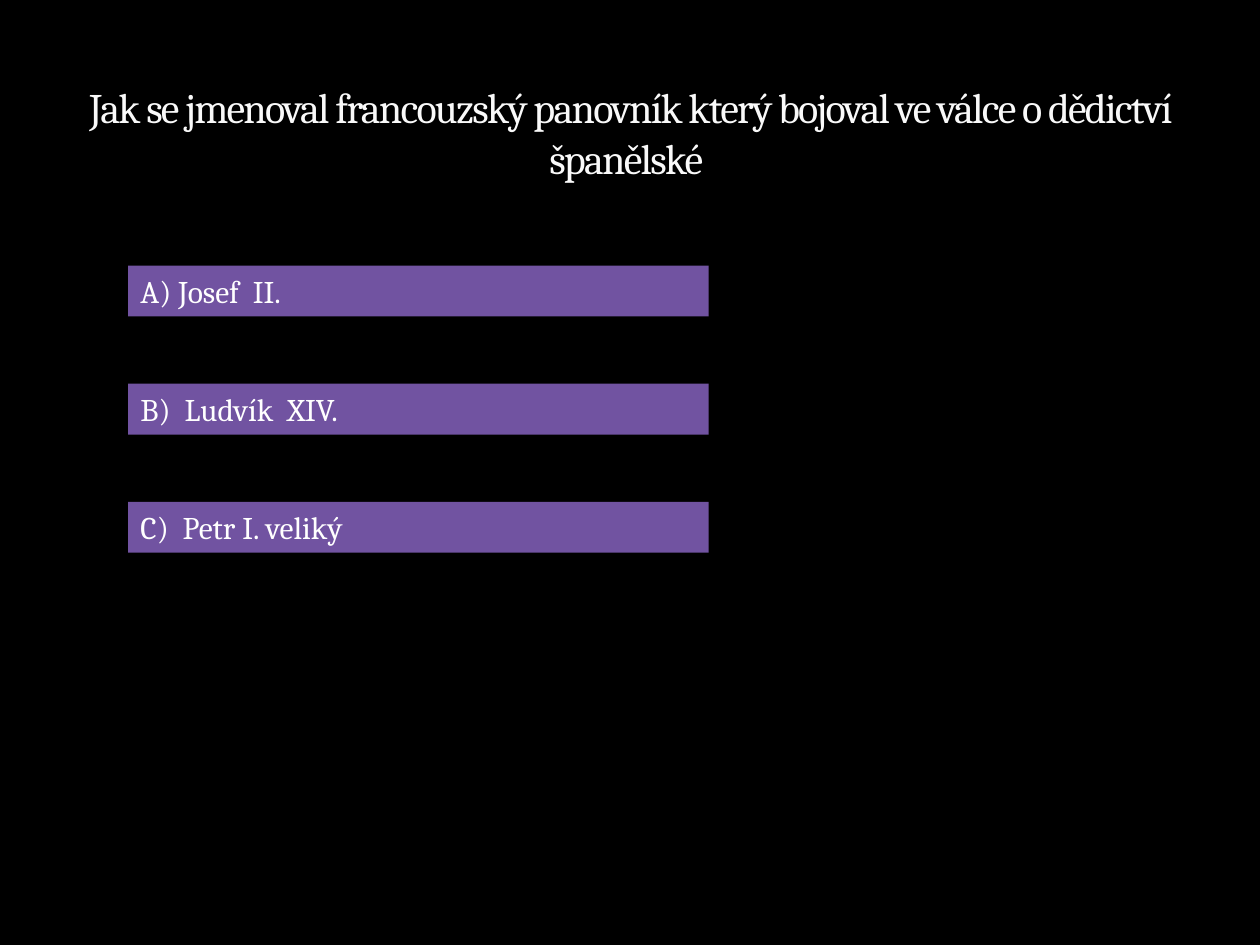
from dataclasses import dataclass

from pptx import Presentation
from pptx.dml.color import RGBColor as RGB
from pptx.enum.shapes import MSO_SHAPE as Preset
from pptx.enum.text import MSO_ANCHOR as Anchor, PP_ALIGN as Align
from pptx.util import Pt

# Content
QUESTION = "Jak se jmenoval francouzský panovník který bojoval ve válce o dědictví španělské "
ANSWERS = ["A) Josef  II.", "B)  Ludvík  XIV.", "C)  Petr I. veliký"]


@dataclass(frozen=True)
class Theme:
    font: str = "Cambria"
    background: RGB = RGB(0x00, 0x00, 0x00)
    question: RGB = RGB(0xF9, 0xF9, 0xF9)
    answer: RGB = RGB(0xFF, 0xFF, 0xFF)
    bar: RGB = RGB(0x71, 0x53, 0xA1)
    question_size: float = 24
    answer_size: float = 18


THEME = Theme()

# Layout in points
SLIDE_SIZE = (720, 540)
QUESTION_BOX = (36, 12.2, 648, 95.8)
BAR_LEFT, BAR_TOP, BAR_WIDTH, BAR_HEIGHT = 73.2, 151.8, 331.8, 29.08
BAR_STEP = 67.5


def write(shape, text, size, color, align, anchor):
    frame = shape.text_frame
    frame.word_wrap = True
    frame.vertical_anchor = anchor
    paragraph = frame.paragraphs[0]
    paragraph.alignment = align
    run = paragraph.add_run()
    run.text = text
    run.font.name = THEME.font
    run.font.size = Pt(size)
    run.font.color.rgb = color
    return run


def add_question(slide):
    box = slide.shapes.add_textbox(*map(Pt, QUESTION_BOX))
    run = write(box, QUESTION, THEME.question_size, THEME.question,
                Align.CENTER, Anchor.BOTTOM)
    # Letter spacing of -1 pt, in hundredths of a point
    run.font._element.set("spc", "-100")


def add_answer(slide, index, text):
    top = BAR_TOP + index * BAR_STEP
    bar = slide.shapes.add_shape(
        Preset.RECTANGLE, Pt(BAR_LEFT), Pt(top), Pt(BAR_WIDTH), Pt(BAR_HEIGHT))
    bar.shadow.inherit = False
    bar.fill.solid()
    bar.fill.fore_color.rgb = THEME.bar
    bar.line.fill.background()
    write(bar, text, THEME.answer_size, THEME.answer, Align.LEFT, Anchor.TOP)


def main():
    presentation = Presentation()
    presentation.slide_width, presentation.slide_height = map(Pt, SLIDE_SIZE)
    slide = presentation.slides.add_slide(presentation.slide_layouts[6])

    # Background
    slide.background.fill.solid()
    slide.background.fill.fore_color.rgb = THEME.background

    # Question and answer bars
    add_question(slide)
    for index, text in enumerate(ANSWERS):
        add_answer(slide, index, text)

    presentation.save("out.pptx")


if __name__ == "__main__":
    main()
